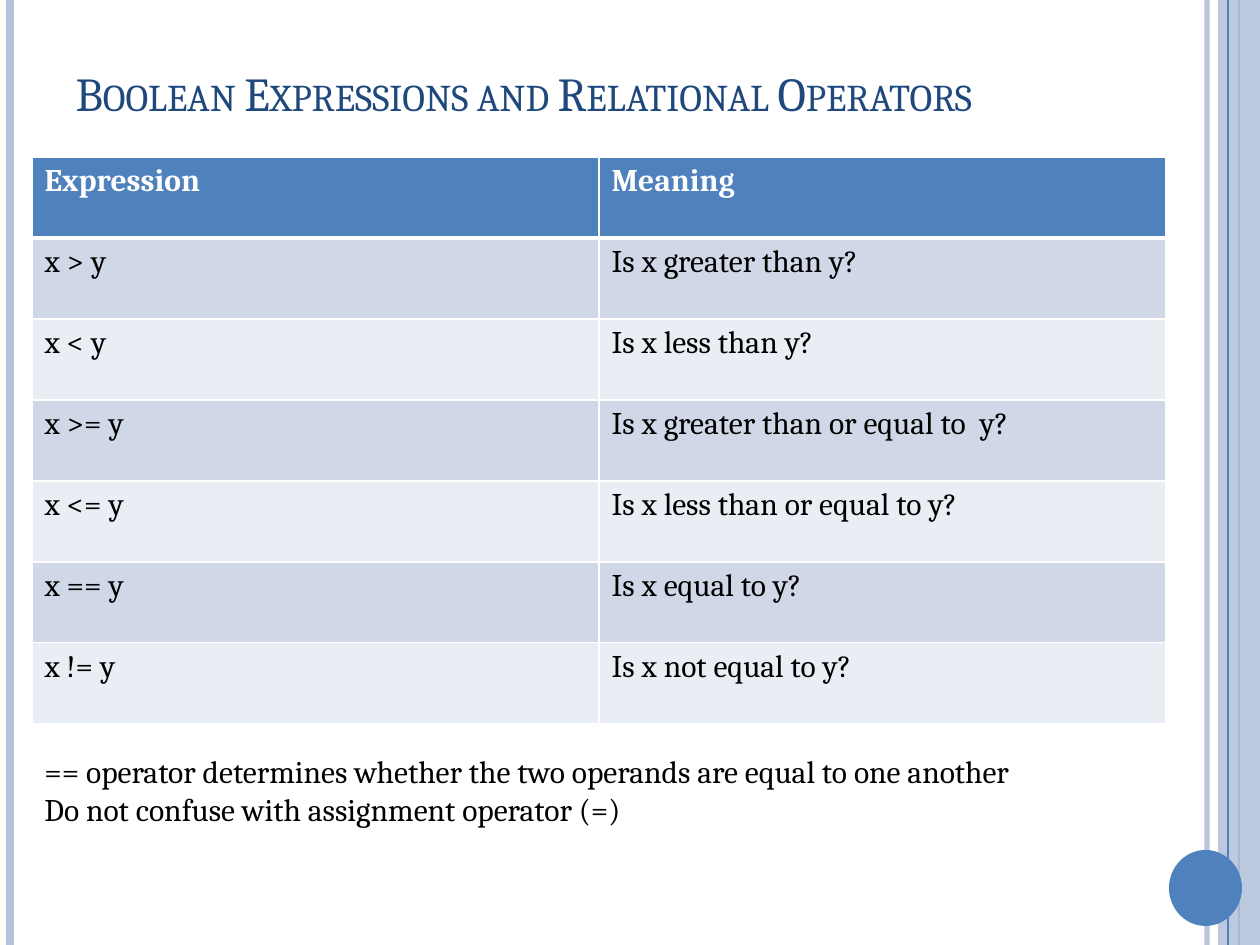
"""Build a slide that lists the relational operators and their meanings."""
from dataclasses import dataclass

from lxml import etree
from pptx import Presentation
from pptx.dml.color import RGBColor
from pptx.enum.shapes import MSO_CONNECTOR, MSO_SHAPE
from pptx.enum.text import MSO_ANCHOR, MSO_AUTO_SIZE, PP_ALIGN
from pptx.oxml.ns import qn
from pptx.util import Emu, Pt

STRAIGHT = MSO_CONNECTOR.STRAIGHT
RECTANGLE, OVAL = MSO_SHAPE.RECTANGLE, MSO_SHAPE.OVAL
TOP, MIDDLE = MSO_ANCHOR.TOP, MSO_ANCHOR.MIDDLE
NO_AUTOFIT = MSO_AUTO_SIZE.NONE
LEFT = PP_ALIGN.LEFT

EMU_PER_INCH, PX_PER_INCH = 914400, 126
SLIDE_WIDTH, SLIDE_HEIGHT = 1260, 945
TITLE_ONLY = 5
FONT = "Cambria"
BLUE, PALE_BLUE, NAVY = "4F81BD", "B3C1DB", "1F497D"
WHITE, BLACK = "FFFFFF", "000000"
BANDS = ("D0D8E8", "E9EDF4")


@dataclass(frozen=True)
class Stripe:
    """A full-height vertical line."""
    x: int
    color: str
    weight: float
    opacity: int = 100


@dataclass(frozen=True)
class Panel:
    """A filled decoration."""
    kind: int
    box: tuple[int, int, int, int]
    color: str
    opacity: int = 100


@dataclass(frozen=True)
class Comparison:
    """One row of the operator table."""
    expression: str
    meaning: str


DECORATIONS = (
    Stripe(1207, PALE_BLUE, 3, 93),
    Stripe(10, PALE_BLUE, 4.5),
    Stripe(1239, BLUE, 1.5),
    Panel(RECTANGLE, (1218, 0, 42, SLIDE_HEIGHT), PALE_BLUE, 87),
    Stripe(1228, BLUE, 0.75),
    Panel(OVAL, (1169, 850, 73, 76), BLUE),
)
HEADER = Comparison("Expression", "Meaning")
COMPARISONS = (
    Comparison("x > y", "Is x greater than y?"),
    Comparison("x < y", "Is x less than y?"),
    Comparison("x >= y", "Is x greater than or equal to  y?"),
    Comparison("x <= y", "Is x less than or equal to y?"),
    Comparison("x == y", "Is x equal to y?"),
    Comparison("x != y", "Is x not equal to y?"),
)
NOTES = (
    "== operator determines whether the two operands are equal to one another",
    "Do not confuse with assignment operator (=)",
)


def px(length: int) -> Emu:
    """Turn pixels into EMU."""
    return Emu(round(length * EMU_PER_INCH / PX_PER_INCH))


def rgb(color: str) -> RGBColor:
    """Turn a hex string into a colour."""
    return RGBColor.from_string(color)


def paint(fill, color: str, opacity: int = 100) -> None:
    """Fill with one colour at the given opacity in percent."""
    fill.solid()
    fill.fore_color.rgb = rgb(color)
    if opacity < 100:
        swatch = fill._xPr.find(".//" + qn("a:srgbClr"))
        etree.SubElement(swatch, qn("a:alpha"), val=str(opacity * 1000))


def write(frame, *lines: str, size: float = 18, color: str = BLACK,
          bold: bool = False, small_caps: bool = False, anchor=TOP) -> None:
    """Write each line as a formatted left-aligned paragraph."""
    frame.word_wrap = True
    frame.vertical_anchor = anchor
    for index, line in enumerate(lines):
        paragraph = frame.add_paragraph() if index else frame.paragraphs[0]
        paragraph.alignment = LEFT
        run = paragraph.add_run()
        run.text = line
        run.font.name, run.font.size, run.font.bold = FONT, Pt(size), bold
        run.font.color.rgb = rgb(color)
        if small_caps:
            run.font._element.set("cap", "small")


def draw_stripe(slide, stripe: Stripe) -> None:
    """Draw a vertical line from the top to the bottom of the slide."""
    x = px(stripe.x)
    connector = slide.shapes.add_connector(STRAIGHT, x, 0, x, px(SLIDE_HEIGHT))
    connector.line.width = Pt(stripe.weight)
    paint(connector.line.fill, stripe.color, stripe.opacity)
    etree.SubElement(connector._element.spPr, qn("a:effectLst"))


def draw_panel(slide, panel: Panel) -> None:
    """Draw a filled shape without outline or shadow."""
    shape = slide.shapes.add_shape(panel.kind, *map(px, panel.box))
    shape.shadow.inherit = False
    shape.line.fill.background()
    paint(shape.fill, panel.color, panel.opacity)


def draw_borders(cell, bottom: float, top: float) -> None:
    """Give a cell white borders, with weights in points."""
    properties = cell._tc.get_or_add_tcPr()
    for side, weight in (("L", 1), ("R", 1), ("T", top), ("B", bottom)):
        border = etree.SubElement(properties, qn(f"a:ln{side}"), w=str(Pt(weight)))
        fill = etree.SubElement(border, qn("a:solidFill"))
        etree.SubElement(fill, qn("a:srgbClr"), val=WHITE)


def draw_table(slide, left: int, top: int, column_width: int, row_height: int) -> None:
    """Draw the operator table with a header and banded rows."""
    rows = (HEADER, *COMPARISONS)
    table = slide.shapes.add_table(
        len(rows), 2, px(left), px(top),
        px(2 * column_width), px(len(rows) * row_height)).table
    table.horz_banding = False
    table.first_row = False
    for column in table.columns:
        column.width = px(column_width)
    for index, comparison in enumerate(rows):
        table.rows[index].height = px(row_height)
        is_header = index == 0
        for column, wording in enumerate((comparison.expression, comparison.meaning)):
            cell = table.cell(index, column)
            draw_borders(cell, bottom=3 if is_header else 1, top=3 if index == 1 else 1)
            paint(cell.fill, BLUE if is_header else BANDS[(index - 1) % 2])
            write(cell.text_frame, wording, bold=is_header,
                  color=WHITE if is_header else BLACK)


def main() -> None:
    """Build and save the slide."""
    deck = Presentation()
    deck.slide_width, deck.slide_height = px(SLIDE_WIDTH), px(SLIDE_HEIGHT)
    slide = deck.slides.add_slide(deck.slide_layouts[TITLE_ONLY])
    paint(slide.background.fill, WHITE)
    for decoration in DECORATIONS:
        if isinstance(decoration, Stripe):
            draw_stripe(slide, decoration)
        else:
            draw_panel(slide, decoration)

    heading = slide.shapes.title
    heading.left, heading.top, heading.width, heading.height = map(px, (63, 38, 1092, 109))
    heading.text_frame.auto_size = NO_AUTOFIT
    write(heading.text_frame, "Boolean Expressions and Relational Operators",
          size=27, color=NAVY, small_caps=True, anchor=MIDDLE)

    draw_table(slide, left=32, top=157, column_width=567, row_height=81)
    remarks = slide.shapes.add_textbox(*map(px, (32, 746, 1134, 89)))
    write(remarks.text_frame, *NOTES)
    deck.save("out.pptx")


if __name__ == "__main__":
    main()
